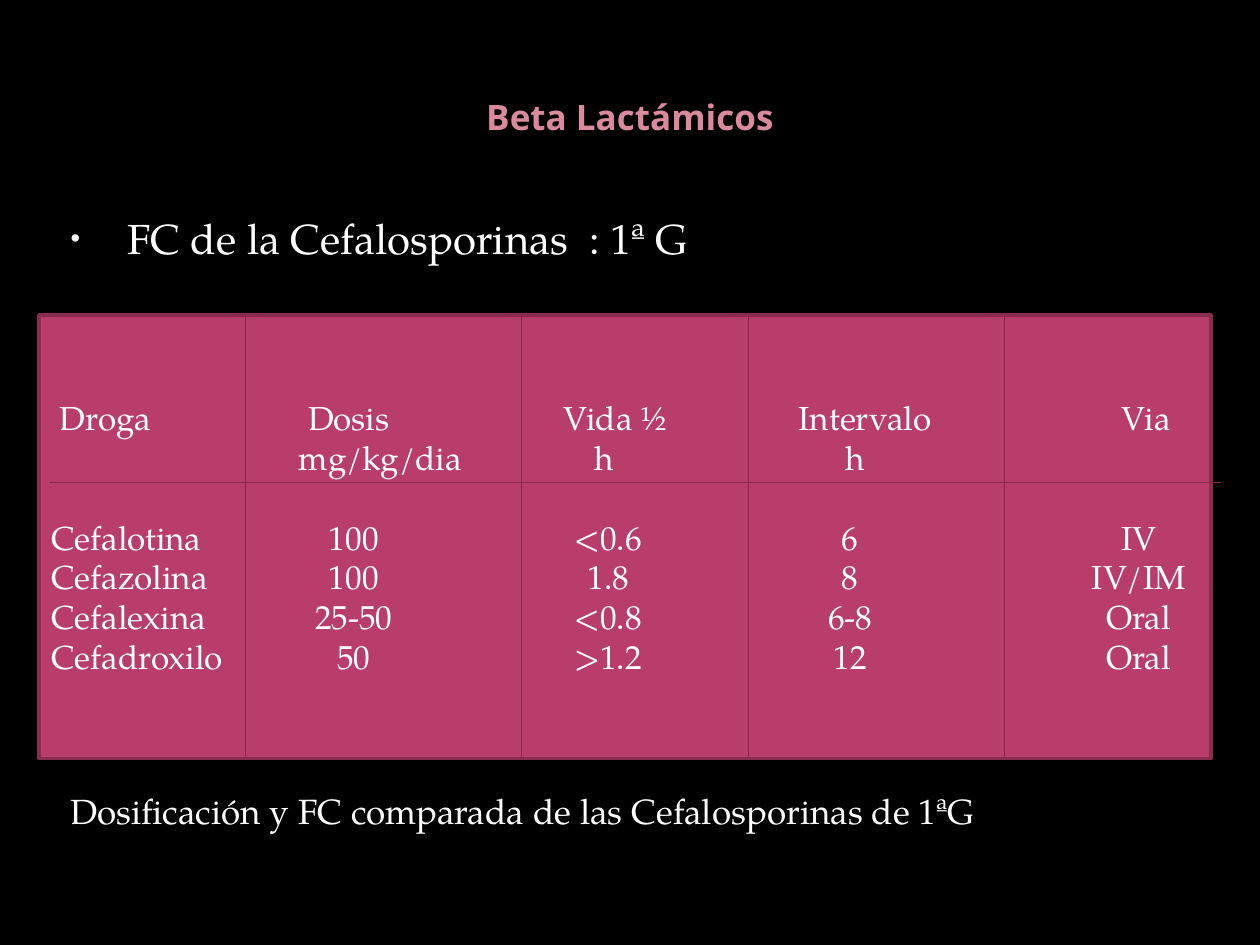
from pptx import Presentation
from pptx.dml.color import RGBColor
from pptx.enum.shapes import MSO_CONNECTOR as Connector, MSO_SHAPE as Shape
from pptx.enum.text import MSO_ANCHOR as Anchor, MSO_AUTO_SIZE as AutoSize, PP_ALIGN as Align
from pptx.oxml.ns import qn
from pptx.util import Inches, Pt
from lxml.etree import SubElement

COLORS = {"background": "000000", "title": "DB8A9E", "text": "FFFFFF", "bullet": "F9F9F9",
          "panel": "B83D68", "frame": "882D4D", "rule": "8A284A"}
TITLE_FONT, TEXT_FONT = "Noto Sans", "TeX Gyre Pagella"

PANEL_LEFT, PANEL_TOP, PANEL_WIDTH, PANEL_HEIGHT = 0.31, 2.5, 9.3, 3.52
PANEL_BOTTOM = PANEL_TOP + PANEL_HEIGHT
PANEL_INSET = 0.1
COLUMN_RULES = [1.95, 4.14, 5.94, 7.97]
HEADER_RULE = 3.83

# Centres of the columns after the first, measured on the slide
HEADER_CENTERS = [2.77, 4.88, 6.87, 9.1]
UNIT_CENTERS = [3.02, 4.8, 6.79]
VALUE_CENTERS = [2.81, 4.83, 6.75, 9.04]

HEADER = (" Droga", "Dosis", "Vida ½", "Intervalo", "Via")
UNITS = ("", "mg/kg/dia", "h", "h")
DRUGS = [
    ("Cefalotina", "100", "<0.6", "6", "IV"),
    ("Cefazolina", "100", "1.8", "8", "IV/IM"),
    ("Cefalexina", "25-50", "<0.8", "6-8", "Oral"),
    ("Cefadroxilo", "50", ">1.2", "12", "Oral"),
]
HEADER_GAP = 22.8  # points between the units and the first drug


def apply(target, values):
    for name, value in values.items():
        setattr(target, name, value)


class SlideBuilder:
    def __init__(self, prs):
        self.slide = prs.slides.add_slide(prs.slide_layouts[1])
        fill = self.slide.background.fill
        fill.solid()
        fill.fore_color.rgb = self.color("background")

    def color(self, name):
        return RGBColor.from_string(COLORS[name])

    def format_font(self, font, face, size, color, bold=False):
        apply(font, {"name": face, "size": Pt(size), "bold": bold})
        font.color.rgb = self.color(color)

    def format_line(self, line, color, width):
        line.color.rgb = self.color(color)
        line.width = Pt(width)

    def place(self, shape, box, anchor):
        apply(shape, dict(zip(("left", "top", "width", "height"), map(Inches, box))))
        apply(shape.text_frame, {"auto_size": AutoSize.NONE, "word_wrap": True,
                                 "vertical_anchor": anchor})

    def title(self, text, box):
        shape = self.slide.shapes.title
        self.place(shape, box, Anchor.MIDDLE)
        shape.text_frame.text = text
        paragraph = shape.text_frame.paragraphs[0]
        paragraph.alignment = Align.CENTER
        self.format_font(paragraph.runs[0].font, TITLE_FONT, 20, "title", True)

    def body(self, items, box):
        """Fill the body with (text, size, space before, has bullet) items."""
        shape = self.slide.placeholders[1]
        self.place(shape, box, Anchor.TOP)
        frame = shape.text_frame
        frame.text = "\n".join(item[0] for item in items)
        for paragraph, (_, size, space, has_bullet) in zip(frame.paragraphs, items):
            paragraph.space_before = Pt(space)
            self.format_font(paragraph.runs[0].font, TEXT_FONT, size, "text")
            self.indent(paragraph, has_bullet)

    def indent(self, paragraph, has_bullet):
        props = paragraph._p.get_or_add_pPr()
        props.set("marL", str(Inches(0.6)))
        props.set("indent", str(Inches(-0.45)))
        if has_bullet:
            bullet_color = SubElement(props, qn("a:buClr"))
            SubElement(bullet_color, qn("a:srgbClr"), val=COLORS["bullet"])
            SubElement(props, qn("a:buSzPct"), val="65000")
            SubElement(props, qn("a:buChar"), char="•")
        else:
            SubElement(props, qn("a:buNone"))

    def panel(self, rows, box):
        """Draw a filled rectangle holding (cells, column centres, space before) rows."""
        shape = self.slide.shapes.add_shape(Shape.RECTANGLE, *map(Inches, box))
        shape.shadow.inherit = False
        self.place(shape, box, Anchor.MIDDLE)
        shape.fill.solid()
        shape.fill.fore_color.rgb = self.color("panel")
        self.format_line(shape.line, "frame", 2)
        frame = shape.text_frame
        frame.margin_left = frame.margin_right = Inches(PANEL_INSET)
        frame.text = "\n".join("\t".join(cells) for cells, _, _ in rows)
        for paragraph, (_, centers, space) in zip(frame.paragraphs, rows):
            apply(paragraph, {"alignment": Align.LEFT, "space_before": Pt(space)})
            self.center_tabs(paragraph, [x - box[0] - PANEL_INSET for x in centers])
            for run in paragraph.runs:
                self.format_font(run.font, TEXT_FONT, 19, "text")

    def center_tabs(self, paragraph, positions):
        tabs = SubElement(paragraph._p.get_or_add_pPr(), qn("a:tabLst"))
        for position in positions:
            SubElement(tabs, qn("a:tab"), pos=str(Inches(position)), algn="ctr")

    def rule(self, x1, y1, x2, y2):
        connector = self.slide.shapes.add_connector(
            Connector.STRAIGHT, *map(Inches, (x1, y1, x2, y2)))
        self.format_line(connector.line, "rule", 0.75)
        SubElement(connector._element.spPr, qn("a:effectLst"))


def main():
    prs = Presentation()
    apply(prs, {"slide_width": Inches(10), "slide_height": Inches(7.5)})
    builder = SlideBuilder(prs)
    builder.title("Beta Lactámicos", (0.5, 0.3, 9, 1.25))
    builder.body([
        ("FC de la Cefalosporinas  : 1ª G", 24, 5, True),
        ("Dosificación y FC comparada de las Cefalosporinas de 1ªG", 20, 300.5, False),
    ], (0.31, 1.64, 9, 5.15))

    rows = [(HEADER, HEADER_CENTERS, 0), (UNITS, UNIT_CENTERS, 0)]
    rows += [(drug, VALUE_CENTERS, 0 if i else HEADER_GAP) for i, drug in enumerate(DRUGS)]
    builder.panel(rows, (PANEL_LEFT, PANEL_TOP, PANEL_WIDTH, PANEL_HEIGHT))
    builder.rule(0.39, HEADER_RULE, 9.69, HEADER_RULE)
    for x in COLUMN_RULES:
        builder.rule(x, PANEL_TOP, x, PANEL_BOTTOM)
    prs.save("out.pptx")


if __name__ == "__main__":
    main()
